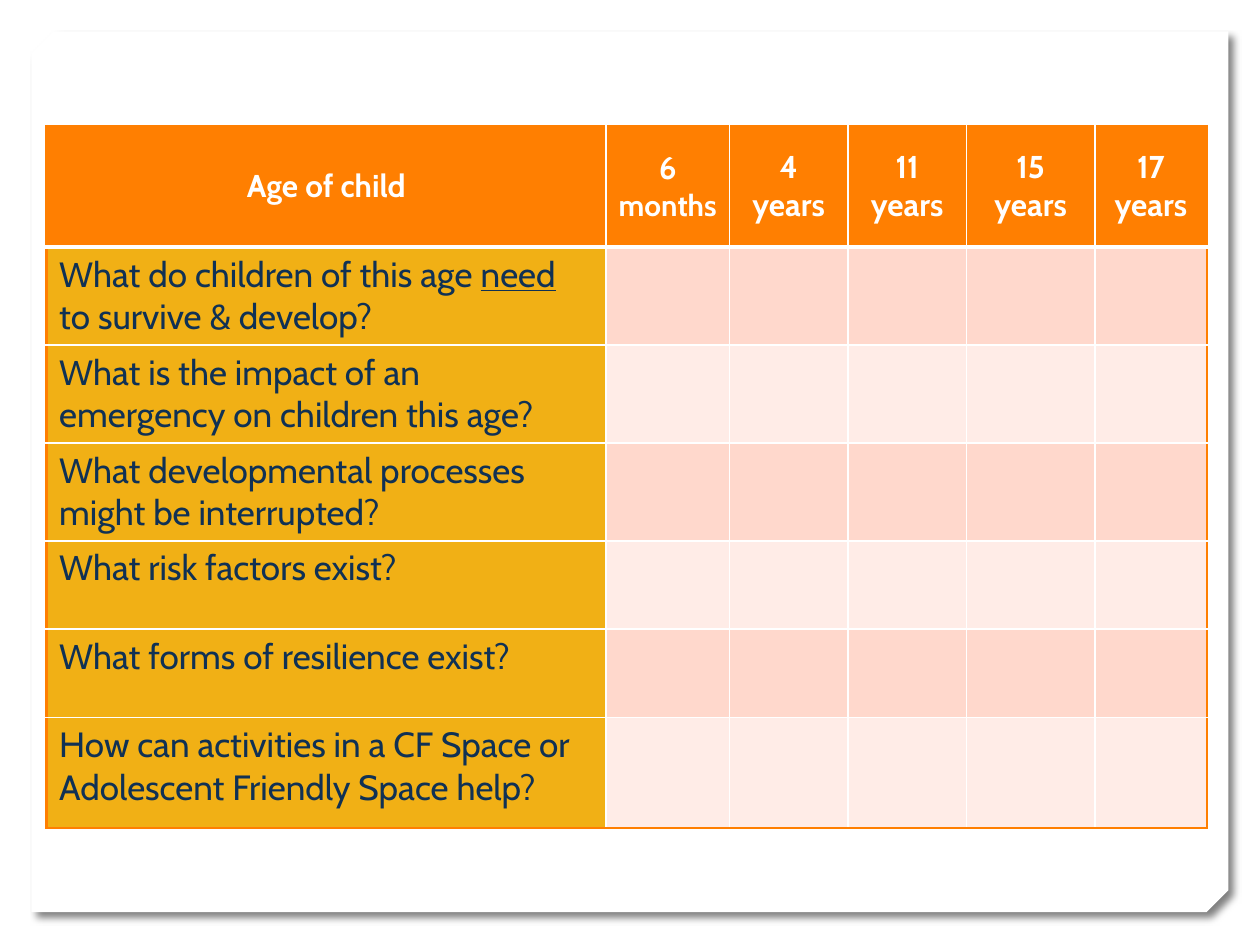
from dataclasses import dataclass

from lxml.etree import SubElement
from pptx import Presentation
from pptx.dml.color import RGBColor
from pptx.enum.shapes import MSO_SHAPE as SHAPE
from pptx.enum.text import MSO_ANCHOR as ANCHOR, PP_ALIGN as ALIGN
from pptx.oxml.ns import qn
from pptx.util import Inches, Pt


@dataclass(frozen=True)
class Theme:
    """Colours, font, type sizes and line widths of the slide."""
    font: str = "Cabin"
    white: str = "FFFFFF"
    orange: str = "FF7F01"
    amber: str = "F1B015"
    navy: str = "103154"
    shadow: str = "000000"
    bands: tuple = ("FFD8CC", "FFECE7")
    header_size: int = 18
    small_size: int = 17
    body_size: int = 20
    thin: float = 1
    outer: float = 1.5
    thick: float = 3


THEME = Theme()
COLUMNS = (4.44, 0.98, 0.94, 0.94, 1.02, 0.89)
ROWS = (0.96, 0.7, 0.7, 0.7, 0.7, 0.7, 0.88)
AGES = (
    [["Age of child"]],
    [["6 ", ("months", {"size": THEME.small_size})]],
    [["4"], ["years"]],
    [["11 years"]],
    [["15 years"]],
    [["17 years"]],
)
QUESTIONS = (
    ["What do children of this age ", ("need", {"underline": True}),
     " to survive & develop?"],
    ["What is the impact of an emergency on children this age?"],
    ["What developmental processes might be interrupted?"],
    ["What risk factors exist?"],
    ["What forms of resilience exist?"],
    ["How can activities in a CF Space or Adolescent Friendly Space help?"],
)


def add_run(p, text, size, color, bold=False, underline=False):
    """Append a formatted run to a paragraph."""
    r = p.add_run()
    r.text = text
    r.font.name, r.font.size = THEME.font, Pt(size)
    r.font.bold, r.font.underline = bold, underline
    r.font.color.rgb = RGBColor.from_string(color)


def write(tf, paragraphs, align=ALIGN.LEFT, **style):
    """Fill a text frame with paragraphs of plain or (text, format) runs."""
    for i, parts in enumerate(paragraphs):
        p = tf.add_paragraph() if i else tf.paragraphs[0]
        p.alignment = align
        for part in parts:
            text, extra = (part, {}) if isinstance(part, str) else part
            add_run(p, text, **{**style, **extra})


def set_borders(cell, **sides):
    """Draw cell borders given as side=(colour, width)."""
    tc_pr = cell._tc.get_or_add_tcPr()
    for side in "LRTB":
        color, width = sides[side]
        ln = SubElement(tc_pr, qn(f"a:ln{side}"), w=str(Pt(width)))
        fill = SubElement(ln, qn("a:solidFill"))
        SubElement(fill, qn("a:srgbClr"), val=color)


def add_card(slide, x, y, w, h):
    """Add the white shadowed sheet with two clipped corners."""
    s = slide.shapes.add_shape(SHAPE.SNIP_2_DIAG_RECTANGLE, x, y, w, h)
    s.adjustments[0], s.adjustments[1] = 0, 0.025
    s.fill.solid()
    s.fill.fore_color.rgb = RGBColor.from_string(THEME.white)
    s.line.fill.background()
    s.shadow.inherit = False
    sp_pr = s._element.spPr
    sp_pr.find(qn("a:xfrm")).set("flipV", "1")
    shadow = SubElement(sp_pr.find(qn("a:effectLst")), qn("a:outerShdw"),
                        blurRad=str(Pt(4)), dist=str(Pt(5)),
                        dir=str(45 * 60000), algn="tl", rotWithShape="0")
    color = SubElement(shadow, qn("a:srgbClr"), val=THEME.shadow)
    SubElement(color, qn("a:alpha"), val="50000")


def style_cell(cell, row, col):
    """Give a cell the borders and fill that belong to its position."""
    inner, outer = (THEME.white, THEME.thin), (THEME.orange, THEME.outer)
    rule = (THEME.white, THEME.thick)
    set_borders(
        cell,
        L=outer if col == 0 else inner,
        R=outer if col == len(COLUMNS) - 1 else inner,
        T=outer if row == 0 else rule if row == 1 else inner,
        B=rule if row == 0 else outer if row == len(ROWS) - 1 else inner)
    if row == 0:
        color = THEME.orange
    else:
        color = THEME.amber if col == 0 else THEME.bands[(row - 1) % 2]
    cell.fill.solid()
    cell.fill.fore_color.rgb = RGBColor.from_string(color)


def add_age_table(slide, x, y, w, h):
    """Add the grid of questions by age of child."""
    table = slide.shapes.add_table(len(ROWS), len(COLUMNS), x, y, w, h).table
    for column, width in zip(table.columns, COLUMNS):
        column.width = Inches(width)
    for row, height in zip(table.rows, ROWS):
        row.height = Inches(height)
    for i in range(len(ROWS)):
        for j in range(len(COLUMNS)):
            style_cell(table.cell(i, j), i, j)
    for j, age in enumerate(AGES):
        cell = table.cell(0, j)
        cell.vertical_anchor = ANCHOR.MIDDLE
        write(cell.text_frame, age, align=ALIGN.CENTER,
              size=THEME.header_size, color=THEME.white, bold=True)
    for i, question in enumerate(QUESTIONS, 1):
        write(table.cell(i, 0).text_frame, [question],
              size=THEME.body_size, color=THEME.navy)


def main():
    """Build the slide and save it."""
    prs = Presentation()
    prs.slide_width, prs.slide_height = Inches(10), Inches(7.5)
    slide = prs.slides.add_slide(prs.slide_layouts[6])
    add_card(slide, Inches(0.25), Inches(0.25), Inches(9.5), Inches(6.99))
    add_age_table(slide, Inches(0.37), Inches(1), Inches(9.22), Inches(5.55))
    prs.save("out.pptx")


if __name__ == "__main__":
    main()
